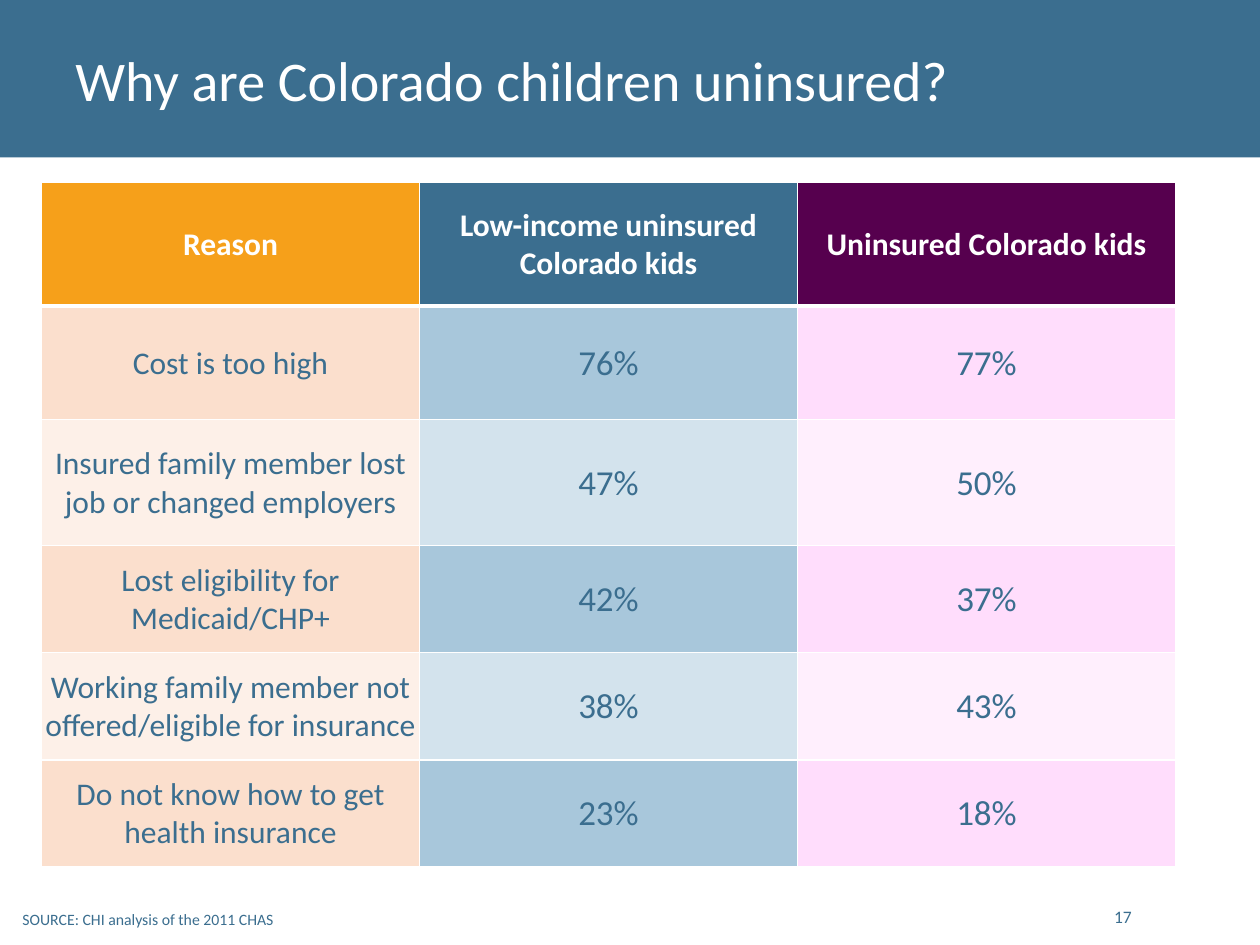
from lxml import etree
from pptx import Presentation
from pptx.dml.color import RGBColor
from pptx.enum.shapes import MSO_SHAPE
from pptx.enum.text import MSO_ANCHOR, PP_ALIGN
from pptx.oxml.ns import qn
from pptx.util import Inches, Pt

RECTANGLE = MSO_SHAPE.RECTANGLE
TOP, MIDDLE, BOTTOM = MSO_ANCHOR.TOP, MSO_ANCHOR.MIDDLE, MSO_ANCHOR.BOTTOM
LEFT, CENTER, RIGHT = PP_ALIGN.LEFT, PP_ALIGN.CENTER, PP_ALIGN.RIGHT

FONT = "Calibri"
BLUE, WHITE = "3B6E8F", "FFFFFF"
HEADER_FILLS = ["F6A01A", BLUE, "56004E"]
BAND_FILLS = [["FBDFCD", "A8C7DB", "FFDDFC"], ["FDF0E8", "D3E3ED", "FFEFFD"]]
ROW_HEIGHTS = [0.98, 0.9, 1, 0.85, 0.85, 0.85]
ROWS = [
    ["Reason", "Low-income uninsured Colorado kids", "Uninsured Colorado kids"],
    ["Cost is too high", "76%", "77%"],
    ["Insured family member lost job or changed employers", "47%", "50%"],
    ["Lost eligibility for Medicaid/CHP+", "42%", "37%"],
    ["Working family member not offered/eligible for insurance", "38%", "43%"],
    ["Do not know how to get health insurance", "23%", "18%"],
]


def rgb(color):
    return RGBColor.from_string(color)


def write(tf, text, size, color, align, bold=False):
    p = tf.paragraphs[0]
    p.text = text
    p.alignment = align
    p.font.name = FONT
    p.font.size = Pt(size)
    p.font.bold = bold
    p.font.color.rgb = rgb(color)


def add_text(s, box, text, size, color, align=LEFT, anchor=TOP, wrap=True):
    tf = s.shapes.add_textbox(*map(Inches, box)).text_frame
    tf.word_wrap = wrap
    tf.vertical_anchor = anchor
    write(tf, text, size, color, align)


def add_banner(s):
    sp = s.shapes.add_shape(RECTANGLE, 0, 0, Inches(10), Inches(1.25))
    sp.shadow.inherit = False
    sp.fill.solid()
    sp.fill.fore_color.rgb = rgb(BLUE)
    sp.line.fill.background()


def set_borders(cell, bottom_width):
    tc_pr = cell._tc.get_or_add_tcPr()
    widths = {"a:lnL": 1, "a:lnR": 1, "a:lnT": 1, "a:lnB": bottom_width}
    for i, (tag, width) in enumerate(widths.items()):
        ln = etree.Element(qn(tag), w=str(Pt(width)))
        fill = etree.SubElement(ln, qn("a:solidFill"))
        etree.SubElement(fill, qn("a:srgbClr"), val=WHITE)
        tc_pr.insert(i, ln)


def format_cell(cell, text, row, col):
    header = row == 0
    fills = HEADER_FILLS if header else BAND_FILLS[(row - 1) % 2]
    cell.fill.solid()
    cell.fill.fore_color.rgb = rgb(fills[col])
    cell.vertical_anchor = MIDDLE
    if not header:
        cell.margin_left = cell.margin_right = cell.margin_top = Inches(0.01)
        cell.margin_bottom = 0
    size = 18 if header or col == 0 else 20
    write(cell.text_frame, text, size, WHITE if header else BLUE, CENTER, header)
    set_borders(cell, 3 if header else 1)


def add_reasons_table(s):
    frame = s.shapes.add_table(
        len(ROWS), len(ROWS[0]),
        Inches(0.33), Inches(1.45), Inches(9), Inches(sum(ROW_HEIGHTS)),
    )
    table = frame.table
    for row, (height, texts) in enumerate(zip(ROW_HEIGHTS, ROWS)):
        table.rows[row].height = Inches(height)
        for col, text in enumerate(texts):
            format_cell(table.cell(row, col), text, row, col)


def main():
    prs = Presentation()
    prs.slide_width, prs.slide_height = Inches(10), Inches(7.5)
    s = prs.slides.add_slide(prs.slide_layouts[6])
    add_banner(s)
    add_reasons_table(s)
    add_text(s, (0.5, 0, 9, 1.25), "Why are Colorado children uninsured?",
             32, WHITE, anchor=MIDDLE)
    add_text(s, (0.08, 7.17, 2.21, 0.25), "SOURCE: CHI analysis of the 2011 CHAS",
             9, BLUE, wrap=False)
    add_text(s, (8.68, 7.01, 0.4, 0.4), "17", 10, BLUE, RIGHT, BOTTOM)
    prs.save("out.pptx")


if __name__ == "__main__":
    main()
